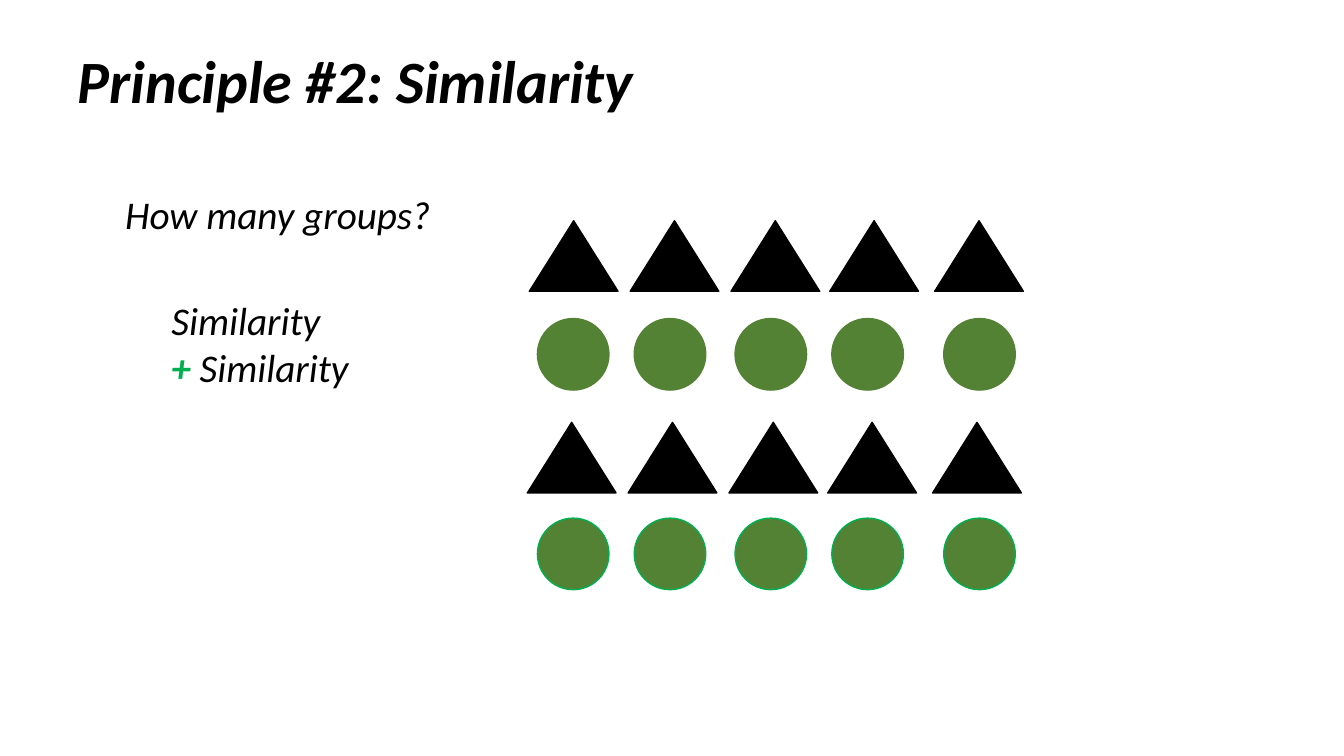
from pptx import Presentation
from pptx.dml.color import RGBColor
from pptx.enum.shapes import MSO_SHAPE
from pptx.enum.text import MSO_ANCHOR, MSO_AUTO_SIZE, PP_ALIGN
from pptx.util import Inches, Pt

BLACK = "000000"
OLIVE = "548235"
GREEN = "00B050"

# Horizontal offsets of the five shapes from the first one in their row
TRIANGLE_OFFSETS = (0, 1, 2, 2.98, 4.02)
CIRCLE_OFFSETS = (0, 0.96, 1.96, 2.92, 4.03)


def color(hex_string):
    return RGBColor.from_string(hex_string)


def place(shape, left, top, width, height):
    shape.left, shape.top = Inches(left), Inches(top)
    shape.width, shape.height = Inches(width), Inches(height)


def style_font(font, size, bold=False):
    font.name = "Calibri"
    font.size = Pt(size)
    font.italic = True
    font.bold = bold
    font.color.rgb = color(BLACK)


def add_title(slide, text):
    title = slide.shapes.title
    place(title, 0.67, 0.21, 9.09, 1)
    frame = title.text_frame
    frame.text = text
    frame.word_wrap = True
    frame.auto_size = MSO_AUTO_SIZE.NONE
    frame.vertical_anchor = MSO_ANCHOR.BOTTOM
    paragraph = frame.paragraphs[0]
    paragraph.alignment = PP_ALIGN.LEFT
    paragraph.line_spacing = 0.9
    style_font(paragraph.font, 42.9, bold=True)


def add_text(slide, left, top, width, height, alignment):
    """Add an empty italic text box and return its frame."""
    frame = slide.shapes.add_textbox(
        Inches(left), Inches(top), Inches(width), Inches(height)
    ).text_frame
    frame.word_wrap = True
    frame.auto_size = MSO_AUTO_SIZE.SHAPE_TO_FIT_TEXT
    paragraph = frame.paragraphs[0]
    paragraph.alignment = alignment
    style_font(paragraph.font, 28)
    return frame


def add_question(slide):
    frame = add_text(slide, 1.1, 1.84, 3.31, 0.57, PP_ALIGN.CENTER)
    frame.paragraphs[0].add_run().text = "How many groups?"


def add_answer(slide):
    frame = add_text(slide, 0.84, 2.89, 3.31, 1.04, PP_ALIGN.LEFT)
    frame.margin_left = Inches(0.86)
    paragraph = frame.paragraphs[0]
    paragraph.add_run().text = "Similarity"
    paragraph.add_line_break()
    plus = paragraph.add_run()
    plus.text = "+ "
    plus.font.bold = True
    plus.font.color.rgb = color(GREEN)
    paragraph.add_run().text = "Similarity"


def add_row(slide, kind, left, top, size, offsets, fill, line):
    """Add one group of equal shapes side by side."""
    row = slide.shapes.add_group_shape()
    width, height = size
    for offset in offsets:
        shape = row.shapes.add_shape(
            kind, Inches(left + offset), Inches(top), Inches(width), Inches(height)
        )
        shape.shadow.inherit = False
        shape.fill.solid()
        shape.fill.fore_color.rgb = color(fill)
        shape.line.color.rgb = color(line)
        shape.line.width = Pt(1)


def add_triangles(slide, left, top):
    add_row(slide, MSO_SHAPE.ISOSCELES_TRIANGLE, left, top, (0.88, 0.7),
            TRIANGLE_OFFSETS, BLACK, BLACK)


def add_circles(slide, top, line):
    add_row(slide, MSO_SHAPE.OVAL, 5.33, top, (0.71, 0.71),
            CIRCLE_OFFSETS, OLIVE, line)


def main():
    presentation = Presentation()
    presentation.slide_width = Inches(13.33)
    presentation.slide_height = Inches(7.5)
    slide = presentation.slides.add_slide(presentation.slide_layouts[5])

    add_title(slide, "Principle #2: Similarity")
    add_triangles(slide, 5.25, 2.19)
    add_triangles(slide, 5.23, 4.19)
    add_question(slide)
    add_circles(slide, 3.16, OLIVE)
    add_circles(slide, 5.14, GREEN)
    add_answer(slide)

    presentation.save("out.pptx")


if __name__ == "__main__":
    main()
